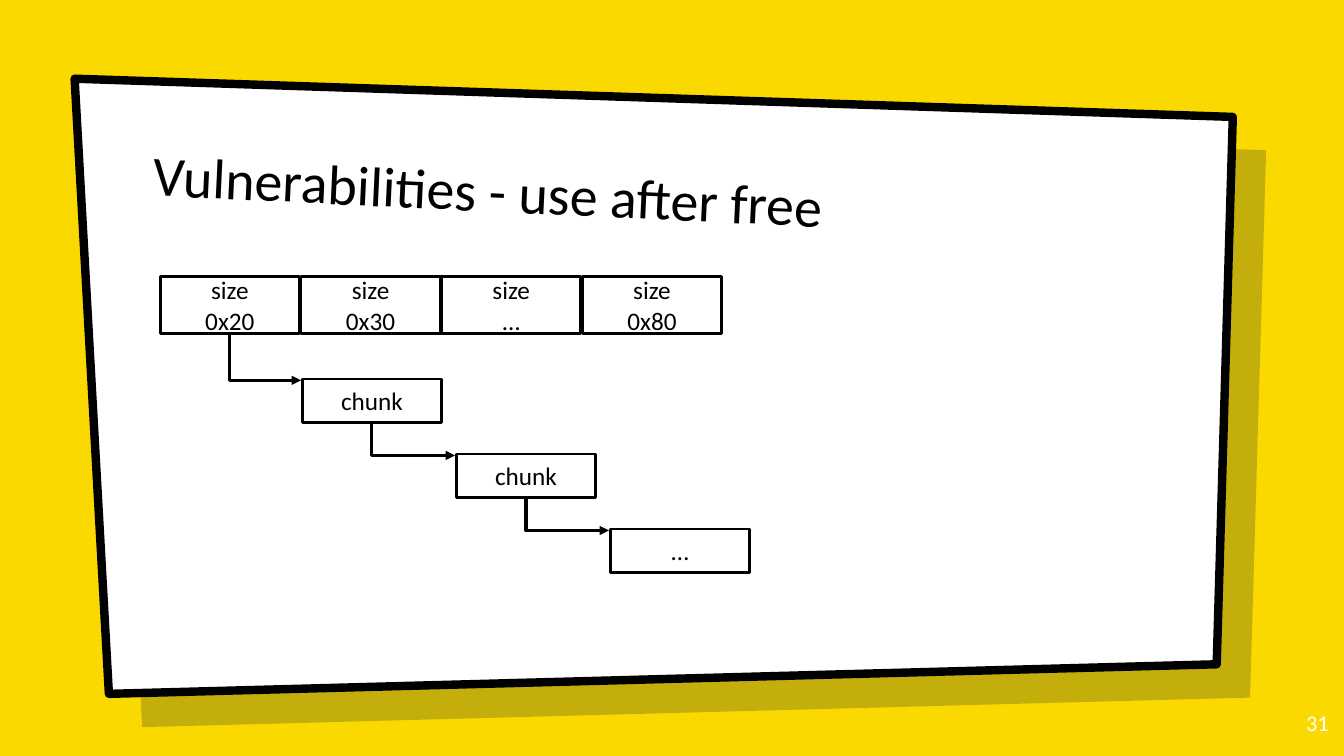
from dataclasses import dataclass

from lxml import etree
from pptx import Presentation
from pptx import util as u
from pptx.dml.color import RGBColor
from pptx.enum import shapes, text
from pptx.oxml import ns

Pt = u.Pt


@dataclass(frozen=True)
class Theme:
    font: str = "Calibri"
    yellow: str = "FAD900"
    white: str = "FFFFFF"
    black: str = "000000"
    navy: str = "001936"
    title_size: int = 40
    body_size: int = 18
    number_size: int = 16


THEME = Theme()


def colour(value):
    return RGBColor.from_string(value)


def write(frame, content, size=THEME.body_size, ink=THEME.black,
          align=text.PP_ALIGN.CENTER, anchor=text.MSO_ANCHOR.MIDDLE, inset=(7.2, 3.6)):
    frame.word_wrap = True
    frame.auto_size = text.MSO_AUTO_SIZE.NONE
    frame.vertical_anchor = anchor
    frame.margin_left = frame.margin_right = Pt(inset[0])
    frame.margin_top = frame.margin_bottom = Pt(inset[1])
    for index, line in enumerate(content.split("\n")):
        para = frame.add_paragraph() if index else frame.paragraphs[0]
        para.alignment = align
        span = para.add_run()
        span.text = line
        span.font.name = THEME.font
        span.font.size = Pt(size)
        span.font.color.rgb = colour(ink)


def place(shape, left, top, width, height):
    shape.left, shape.top = Pt(left), Pt(top)
    shape.width, shape.height = Pt(width), Pt(height)


def add_panel(page, left, top, fill):
    corners = [(0, 0), (827.3, 27.3), (815.8, 418.3), (24.5, 439.4)]
    points = [(Pt(left + x), Pt(top + y)) for x, y in corners]
    builder = page.shapes.build_freeform(*points[0], scale=1.0)
    builder.add_line_segments(points[1:], close=True)
    panel = builder.convert_to_shape()
    panel.shadow.inherit = False
    panel.fill.solid()
    panel.fill.fore_color.rgb = colour(fill)
    return panel


def add_backdrop(page, left, top):
    page.background.fill.solid()
    page.background.fill.fore_color.rgb = colour(THEME.yellow)
    # Translucent offset panel
    shade = add_panel(page, left + 23.8, top + 23.8, THEME.navy)
    shade.line.fill.background()
    tint = next(shade.element.spPr.iter(ns.qn("a:srgbClr")))
    etree.SubElement(tint, ns.qn("a:alpha"), val="22000")
    # White panel with a heavy border
    panel = add_panel(page, left, top, THEME.white)
    panel.line.color.rgb = colour(THEME.black)
    panel.line.width = Pt(6)


def add_title(page, left, top, width, height):
    title = page.shapes.title
    place(title, left, top, width, height)
    title.rotation = 2.7
    write(title.text_frame, "Vulnerabilities - use after free", size=THEME.title_size,
          align=text.PP_ALIGN.LEFT, anchor=text.MSO_ANCHOR.BOTTOM, inset=(7.2, 7.2))


def add_page_number(page, left, top, width, height):
    box = page.shapes.add_textbox(Pt(left), Pt(top), Pt(width), Pt(height))
    write(box.text_frame, "31", size=THEME.number_size, ink=THEME.white,
          align=text.PP_ALIGN.RIGHT, anchor=text.MSO_ANCHOR.TOP, inset=(7.2, 7.2))


def add_cell(page, label, left, top, width, height):
    cell = page.shapes.add_shape(shapes.MSO_SHAPE.RECTANGLE,
                                 Pt(left), Pt(top), Pt(width), Pt(height))
    cell.shadow.inherit = False
    cell.fill.solid()
    cell.fill.fore_color.rgb = colour(THEME.white)
    cell.line.color.rgb = colour(THEME.black)
    cell.line.width = Pt(2)
    write(cell.text_frame, label)


def add_elbow(page, x1, y1, x2, y2):
    """Arrow that runs down from the start, then right to the end."""
    across, down = x2 - x1, y2 - y1
    mid_x, mid_y = (x1 + x2) / 2, (y1 + y2) / 2
    # The preset runs sideways first, so it is mirrored and turned
    arrow = page.shapes.add_connector(
        shapes.MSO_CONNECTOR.ELBOW,
        Pt(mid_x + down / 2), Pt(mid_y - across / 2),
        Pt(mid_x - down / 2), Pt(mid_y + across / 2))
    arrow.line.color.rgb = colour(THEME.black)
    arrow.line.width = Pt(2.25)
    props = arrow.element.spPr
    props.find(ns.qn("a:xfrm")).set("rot", "16200000")
    props.find(ns.qn("a:prstGeom")).set("prst", "bentConnector2")
    etree.SubElement(props.find(ns.qn("a:ln")), ns.qn("a:tailEnd"), type="triangle")
    etree.SubElement(props, ns.qn("a:effectLst"))


def add_bins(page, left, top, width, height):
    # Row of size bins
    for index, size in enumerate(["0x20", "0x30", "…", "0x80"]):
        add_cell(page, f"size\n{size}", left + index * 100.5, top, width, height)
    # Staircase of chunks linked from the first bin
    start_x, start_y = left + width / 2, top + height
    for index, label in enumerate(["chunk", "chunk", "…"]):
        chunk_left = left + 101.5 + index * 110
        chunk_top = top + 73.4 + index * 53.6
        chunk_height = 31
        add_cell(page, label, chunk_left, chunk_top, width, chunk_height)
        add_elbow(page, start_x, start_y, chunk_left - 1, chunk_top + 1)
        start_x, start_y = chunk_left + width / 2, chunk_top + chunk_height


def main():
    deck = Presentation()
    deck.slide_width, deck.slide_height = Pt(960), Pt(540)
    page = deck.slides.add_slide(deck.slide_layouts[5])
    add_backdrop(page, 53.3, 56.2)
    # Bring the title in front of the panels
    page.shapes.title.element.getparent().append(page.shapes.title.element)
    add_title(page, 102.2, 92.2, 738, 80)
    add_page_number(page, 898.6, 499, 57.6, 41)
    add_bins(page, 114.5, 197.3, 99.4, 41)
    deck.save("out.pptx")


if __name__ == "__main__":
    main()
